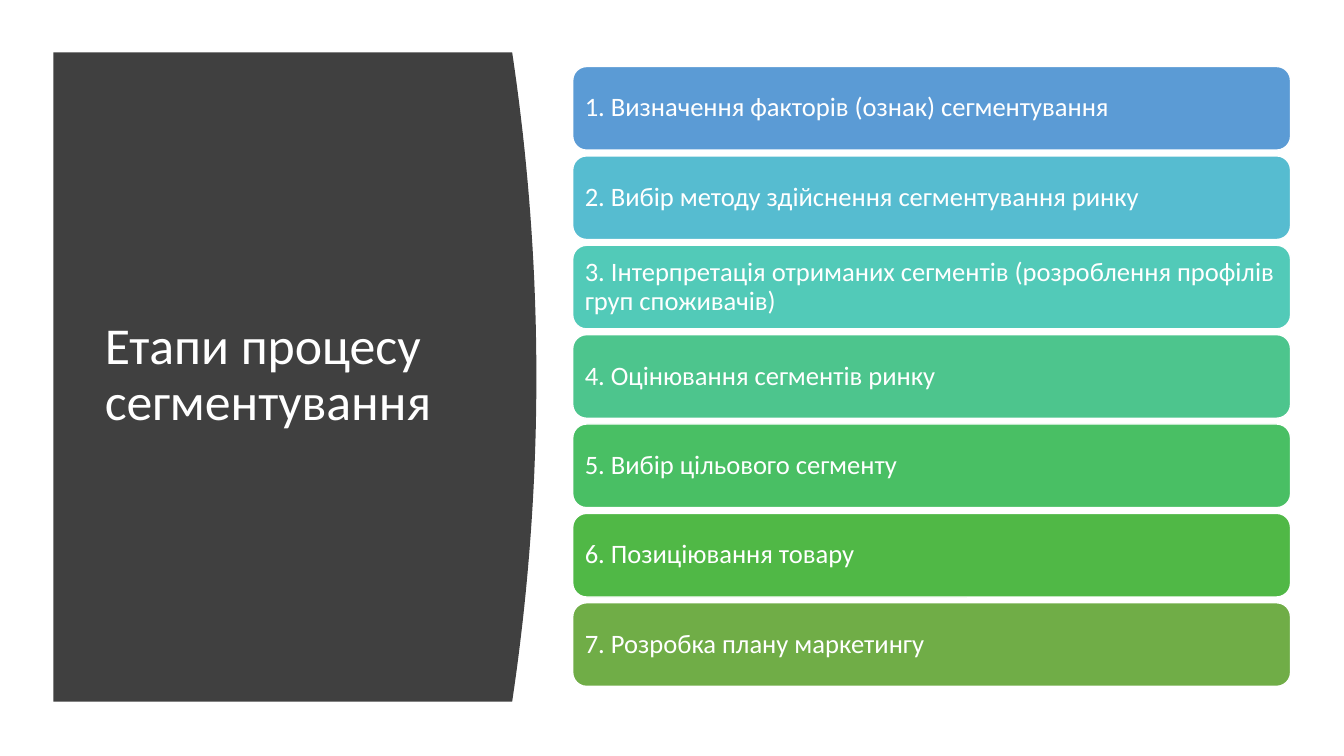
from pptx import Presentation, util as u
from pptx.dml.color import RGBColor
from pptx.enum import shapes, text

WHITE = "FFFFFF"
STAGES = [
    ("1. Визначення факторів (ознак) сегментування", "5B9BD5"),
    ("2. Вибір методу здійснення сегментування ринку", "56BCD0"),
    ("3. Інтерпретація отриманих сегментів (розроблення профілів груп споживачів)", "52CAB8"),
    ("4. Оцінювання сегментів ринку", "4DC58D"),
    ("5. Вибір цільового сегменту", "49BF64"),
    ("6. Позиціювання товару", "50B846"),
    ("7. Розробка плану маркетингу", "70AD47"),
]


def color(hex_code):
    return RGBColor.from_string(hex_code)


class SlideBuilder:
    font = "Calibri"
    ink = WHITE

    def __init__(self, slide):
        self.slide = slide

    def set_wording(self, frame, wording, size):
        frame.word_wrap = True
        frame.auto_size = text.MSO_AUTO_SIZE.NONE
        frame.vertical_anchor = text.MSO_ANCHOR.MIDDLE
        line = frame.paragraphs[0]
        line.alignment = text.PP_ALIGN.LEFT
        line.line_spacing = 0.9
        run = line.add_run()
        run.text = wording
        run.font.name = self.font
        run.font.size = u.Pt(size)
        run.font.color.rgb = color(self.ink)

    def title(self, wording, left, top, width, height, size):
        heading = self.slide.shapes.title
        heading.left, heading.top = u.Inches(left), u.Inches(top)
        heading.width, heading.height = u.Inches(width), u.Inches(height)
        self.set_wording(heading.text_frame, wording, size)

    def curved_panel(self, left, top, edge, bottom, bulge, fill, steps=40):
        middle, half = (top + bottom) / 2, (bottom - top) / 2
        outline = []
        for step in range(steps + 1):
            y = top + (bottom - top) * step / steps
            x = edge + bulge * (1 - ((y - middle) / half) ** 2)
            outline.append((u.Inches(x), u.Inches(y)))
        outline.append((u.Inches(left), u.Inches(bottom)))
        builder = self.slide.shapes.build_freeform(u.Inches(left), u.Inches(top))
        builder.add_line_segments(outline, close=True)
        panel = builder.convert_to_shape()
        panel.shadow.inherit = False
        panel.fill.solid()
        panel.fill.fore_color.rgb = color(fill)
        panel.line.fill.background()
        self.slide.shapes.title._element.addprevious(panel._element)

    def card(self, wording, left, top, width, height, fill, size, inset):
        card = self.slide.shapes.add_shape(
            shapes.MSO_SHAPE.ROUNDED_RECTANGLE,
            u.Inches(left), u.Inches(top), u.Inches(width), u.Inches(height))
        card.shadow.inherit = False
        card.fill.solid()
        card.fill.fore_color.rgb = color(fill)
        card.line.color.rgb = color(WHITE)
        card.line.width = u.Pt(1)
        frame = card.text_frame
        frame.margin_left = frame.margin_right = u.Inches(inset)
        frame.margin_top = frame.margin_bottom = u.Inches(inset)
        self.set_wording(frame, wording, size)


def main():
    deck = Presentation()
    deck.slide_width, deck.slide_height = u.Inches(13.33), u.Inches(7.5)
    page = SlideBuilder(deck.slides.add_slide(deck.slide_layouts[5]))
    page.curved_panel(0.53, 0.52, 5.08, 6.96, 0.24, "404040")
    page.title("Етапи процесу сегментування", 0.94, 1.11, 3.74, 5.24, 37)
    first_top, last_top = 0.66, 5.98
    pitch = (last_top - first_top) / (len(STAGES) - 1)
    for index, (stage, fill) in enumerate(STAGES):
        page.card(stage, 5.68, first_top + index * pitch, 7.12, 0.83, fill, 19, 0.08)
    deck.save("out.pptx")


if __name__ == "__main__":
    main()
